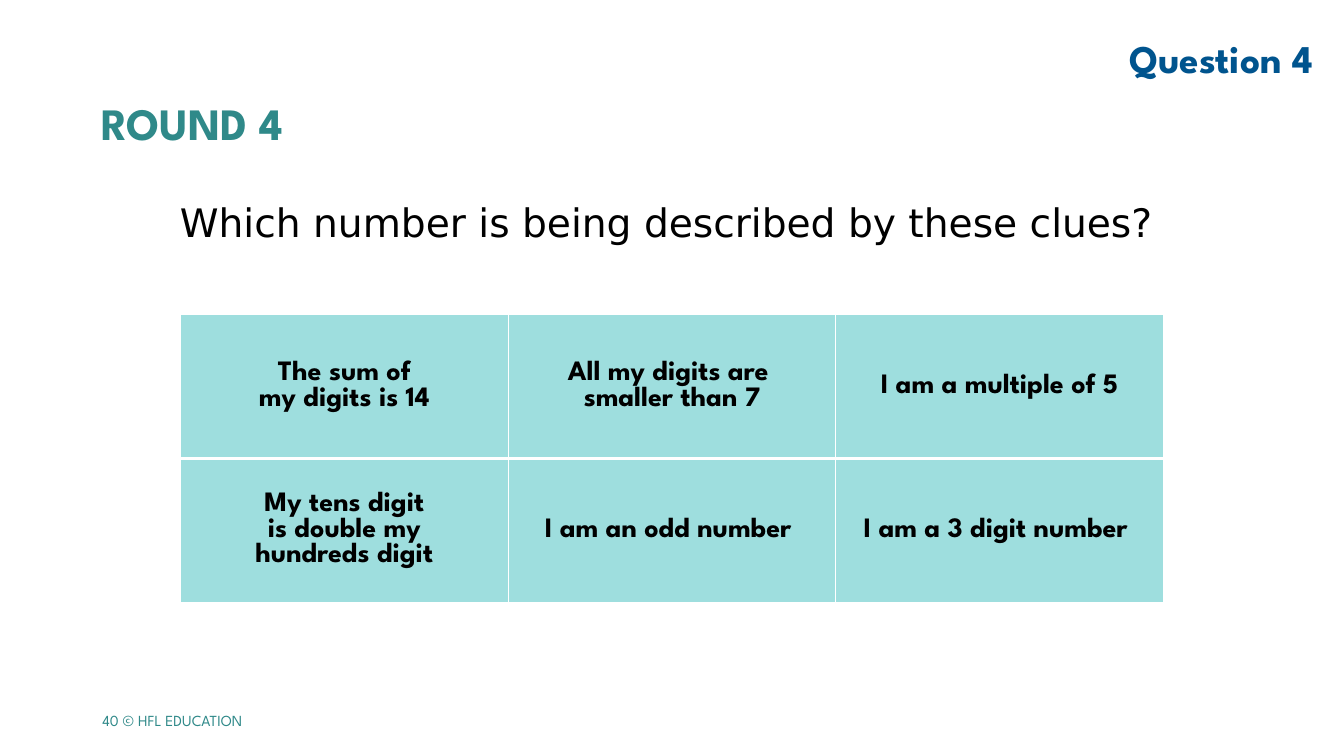
from lxml import etree
from pptx import Presentation
from pptx.dml.color import RGBColor
from pptx.enum.text import MSO_ANCHOR as Anchor, PP_ALIGN as Align
from pptx.oxml.ns import qn
from pptx.util import Pt

COLORS = {
    "teal": "2F8989",
    "blue": "00548E",
    "black": "000000",
    "cell": "9EDEDE",
    "white": "FFFFFF",
}
HEADING_FONT = "League Spartan"
QUESTION_FONT = "DejaVu Sans"

CLUES = [
    ["The sum of\nmy digits is 14", "All my digits are \nsmaller than 7", "I am a multiple of 5"],
    ["My tens digit\nis double my\nhundreds digit", "I am an odd number ", "I am a 3 digit number "],
]
COLUMN_WIDTH, ROW_HEIGHT = 234, 102.6


def color(name):
    return RGBColor.from_string(COLORS[name])


def write_text(frame, text, *, size, ink="black", font=HEADING_FONT, bold=False, align=Align.LEFT):
    """Fill a text frame with one paragraph per line of text."""
    for index, line in enumerate(text.split("\n")):
        paragraph = frame.add_paragraph() if index else frame.paragraphs[0]
        paragraph.alignment = align
        run = paragraph.add_run()
        run.text = line
        run.font.name = font
        run.font.size = Pt(size)
        run.font.bold = bold
        run.font.color.rgb = color(ink)


def add_label(slide, box, text, *, anchor=Anchor.MIDDLE, wrap=True, **text_format):
    shape = slide.shapes.add_textbox(*map(Pt, box))
    frame = shape.text_frame
    frame.word_wrap = wrap
    frame.vertical_anchor = anchor
    write_text(frame, text, **text_format)


def set_borders(cell, widths):
    """Draw white borders; widths maps the tags lnL, lnR, lnT, lnB to points."""
    properties = cell._tc.get_or_add_tcPr()
    for index, (tag, width) in enumerate(widths.items()):
        line = etree.Element(qn(f"a:{tag}"), w=str(Pt(width)))
        fill = etree.SubElement(line, qn("a:solidFill"))
        etree.SubElement(fill, qn("a:srgbClr"), val=COLORS["white"])
        properties.insert(index, line)


def add_clue_table(slide, left, top):
    rows, columns = len(CLUES), len(CLUES[0])
    frame = slide.shapes.add_table(
        rows, columns, Pt(left), Pt(top), Pt(columns * COLUMN_WIDTH), Pt(rows * ROW_HEIGHT))
    table = frame.table
    for column in table.columns:
        column.width = Pt(COLUMN_WIDTH)
    for row_index, clues in enumerate(CLUES):
        table.rows[row_index].height = Pt(ROW_HEIGHT)
        for column_index, clue in enumerate(clues):
            cell = table.cell(row_index, column_index)
            cell.fill.solid()
            cell.fill.fore_color.rgb = color("cell")
            cell.vertical_anchor = Anchor.MIDDLE
            write_text(cell.text_frame, clue, size=20, bold=True, align=Align.CENTER)
            set_borders(cell, {
                "lnL": 1,
                "lnR": 1,
                "lnT": 3 if row_index > 0 else 1,
                "lnB": 3 if row_index < rows - 1 else 1,
            })


def main():
    presentation = Presentation()
    presentation.slide_width = Pt(960)
    presentation.slide_height = Pt(540)
    slide = presentation.slides.add_slide(presentation.slide_layouts[6])

    add_label(slide, (66, 500.4, 198, 28.8), "40 © HFL EDUCATION", size=11, ink="teal")
    add_label(slide, (65.5, 42.5, 708.5, 90.7), "ROUND 4", size=32, ink="teal", bold=True)
    add_label(slide, (787, 20.9, 157.7, 41), "Question 4", size=28, ink="blue", bold=True,
              align=Align.RIGHT, anchor=Anchor.TOP, wrap=False)
    add_clue_table(slide, 129, 224.9)
    add_label(slide, (5, 136.8, 950.4, 43.9), "Which number is being described by these clues? ",
              size=28, font=QUESTION_FONT, align=Align.CENTER)

    presentation.save("out.pptx")


if __name__ == "__main__":
    main()
